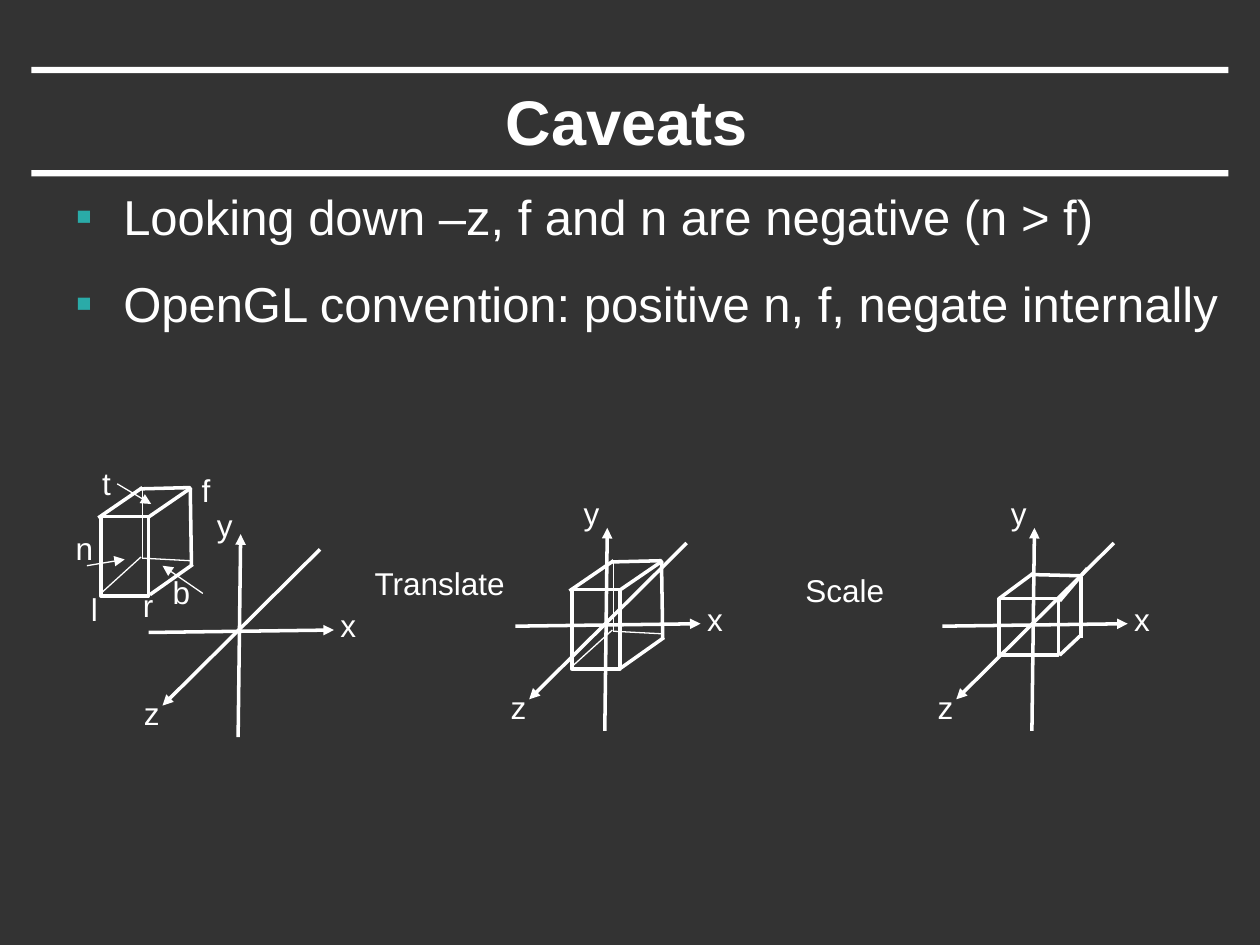
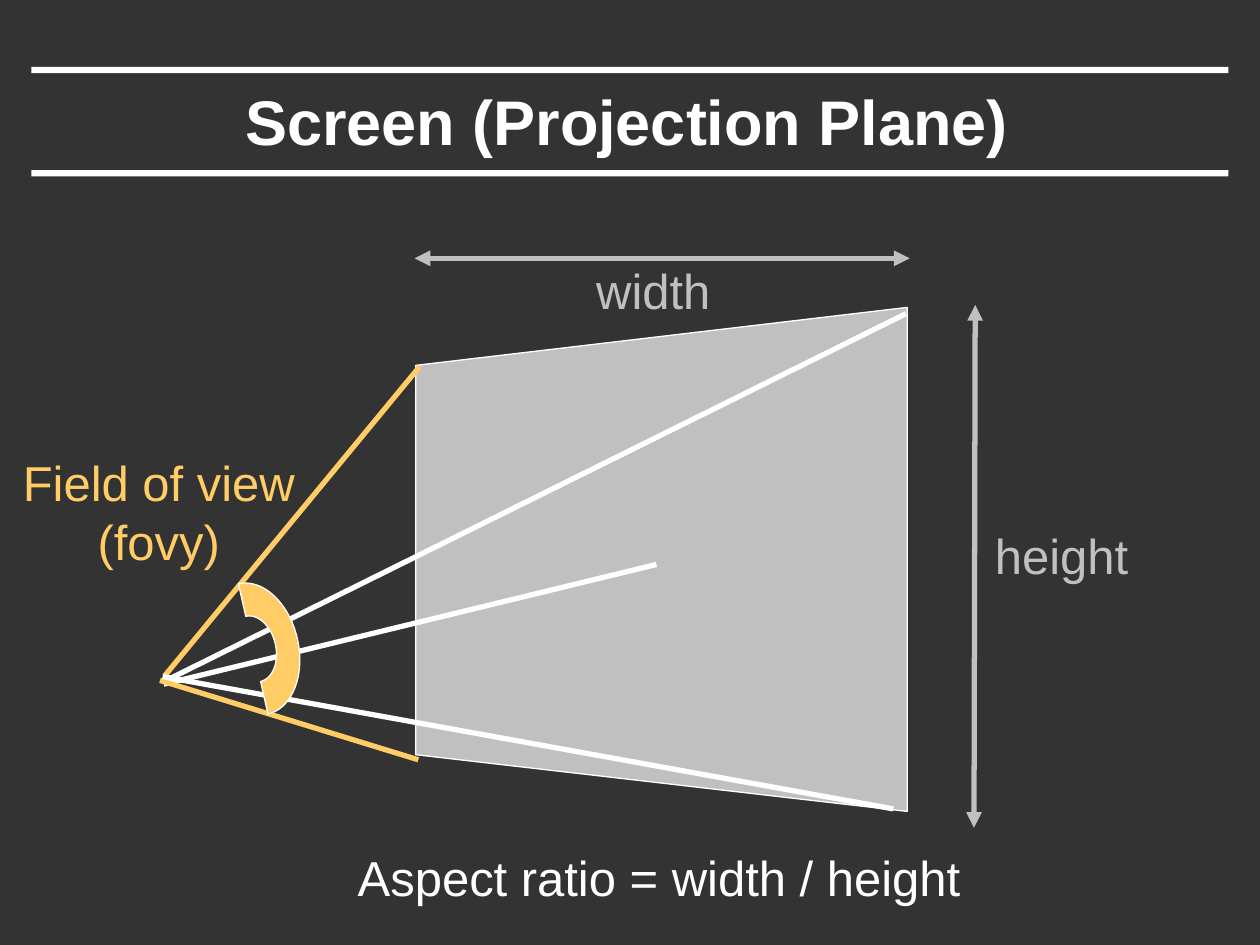
import math
from dataclasses import dataclass

import pptx
import pptx.dml.color
import pptx.enum.shapes
import pptx.enum.text
import pptx.oxml.ns
import pptx.util
from lxml import etree

UNIT = pptx.util.Cm(2.54)
FONT = "Arial"
HUES = {
    "back": "333333",
    "white": "FFFFFF",
    "teal": "2AABA8",
    "grey": "C0C0C0",
    "gold": "FFCC66",
}
THICK, THIN, BOLD = 2, 0.75, 3
TIP = ("tailEnd",)
BOTH = ("headEnd", "tailEnd")


@dataclass(frozen=True)
class Line:
    x1: float
    y1: float
    x2: float
    y2: float
    width: float = THICK
    hue: str = "white"
    tips: tuple[str, ...] = ()


@dataclass(frozen=True)
class Label:
    lines: tuple[str, ...]
    x: float
    y: float
    w: float = 0.33
    h: float = 0.4
    size: int = 18
    hue: str = "white"
    bold: bool = False
    middle: bool = False


@dataclass(frozen=True)
class Cube:
    x: float
    y: float
    w: float
    h: float
    edges: tuple[Line, ...]


AXES = (
    Line(-0.72, 0.01, 0.75, -0.01, tips=TIP),
    Line(-0.01, 0.84, 0.01, -0.77, tips=TIP),
    Line(0.64, -0.65, -0.61, 0.59, tips=TIP),
)
TALL = (
    Line(-0.02, 0.01, 0.33, -0.23),
    Line(0.71, -0.23, 0.31, -0.22),
    Line(0.37, 0.01, 0.72, -0.23),
    Line(0.39, 0.62, 0.73, 0.38),
    Line(0.71, -0.22, 0.72, 0.39),
    Line(0, 0.61, 0.32, 0.32, THIN),
    Line(0.33, 0.33, 0.71, 0.35, THIN),
    Line(0.33, -0.22, 0.33, 0.34, THIN),
)
SHORT = (
    Line(0, 0, 0.27, -0.2),
    Line(0.65, -0.18, 0.25, -0.19),
    Line(0.48, 0.02, 0.7, -0.24),
    Line(0.48, 0.45, 0.65, 0.29),
    Line(0.65, -0.17, 0.65, 0.31),
)
CUBES = (
    Cube(0.8, 4.1, 0.38, 0.63, TALL),
    Cube(4.54, 4.68, 0.38, 0.63, TALL),
    Cube(7.93, 4.75, 0.47, 0.45, SHORT),
)
SIDES = (
    Label(("l",), 0.62, 4.63, 0.26),
    Label(("r",), 1.03, 4.6, 0.29),
    Label(("t",), 0.71, 3.63, 0.27),
    Label(("b",), 1.27, 4.5, 0.34),
    Label(("n",), 0.5, 4.15, 0.34),
    Label(("f",), 1.49, 3.69, 0.29),
)
HINTS = (
    Line(1.61, 4.71, 1.29, 4.49, THIN, tips=TIP),
    Line(0.93, 3.84, 1.2, 4, THIN, tips=TIP),
    Line(0.69, 4.49, 0.99, 4.44, THIN, tips=TIP),
)
STEPS = (
    Label(("Translate",), 2.87, 4.43, 1.24),
    Label(("Scale",), 6.29, 4.48, 0.83),
)
NOTES = (
    "Looking down –z, f and n are negative (n > f)",
    "OpenGL convention: positive n, f, negate internally",
)
PLANE = [(7.2, 2.44), (3.3, 2.9), (3.3, 5.99), (7.2, 6.44)]
RAYS = (
    Line(1.3, 5.41, 7.19, 2.49, BOLD),
    Line(1.3, 5.43, 5.21, 4.48, BOLD),
    Line(1.31, 5.36, 3.33, 2.91, BOLD, "gold"),
    Line(1.27, 5.4, 3.32, 6.03, BOLD, "gold"),
    Line(1.29, 5.37, 7.09, 6.42, BOLD),
)
SPANS = (
    Line(3.29, 2.05, 7.22, 2.05, BOLD, "grey", BOTH),
    Line(7.73, 6.57, 7.74, 2.42, BOLD, "grey", BOTH),
)
TERMS = (
    Label(("Field of view", "(fovy)"), 0.07, 3.54, 2.38, 1.04, 28, "gold"),
    Label(("width",), 4.62, 2.02, 1.13, 0.57, 28, "grey"),
    Label(("height",), 7.79, 4.12, 1.27, 0.57, 28, "grey"),
    Label(("Aspect ratio = width / height",), 2.71, 6.68, 5.04, 0.57, 28),
)


def emu(*values: float) -> list[int]:
    return [round(value * UNIT) for value in values]


def color(hue: str) -> pptx.dml.color.RGBColor:
    return pptx.dml.color.RGBColor.from_string(HUES[hue])


def add_node(parent, tag: str, **attrs: str):
    return etree.SubElement(parent, pptx.oxml.ns.qn(tag), attrs)


def add_run(para, text: str, size: int, hue: str, bold: bool = False) -> None:
    run = para.add_run()
    run.text = text
    run.font.name = FONT
    run.font.size = pptx.util.Pt(size)
    run.font.bold = bold
    run.font.color.rgb = color(hue)


def style(shape, fill: str | None, line: str | None, width: float = THIN) -> None:
    shape.shadow.inherit = False
    if fill:
        shape.fill.solid()
        shape.fill.fore_color.rgb = color(fill)
    else:
        shape.fill.background()
    if line:
        shape.line.color.rgb = color(line)
        shape.line.width = pptx.util.Pt(width)
    else:
        shape.line.fill.background()


def add_rect(slide, x: float, y: float, w: float, h: float,
             fill: str | None, line: str | None) -> None:
    kind = pptx.enum.shapes.MSO_SHAPE.RECTANGLE
    style(slide.shapes.add_shape(kind, *emu(x, y, w, h)), fill, line, THICK)


def add_line(slide, line: Line, dx: float = 0, dy: float = 0) -> None:
    kind = pptx.enum.shapes.MSO_CONNECTOR.STRAIGHT
    ends = emu(line.x1 + dx, line.y1 + dy, line.x2 + dx, line.y2 + dy)
    link = slide.shapes.add_connector(kind, *ends)
    link.line.color.rgb = color(line.hue)
    link.line.width = pptx.util.Pt(line.width)
    for tip in line.tips:
        add_node(link.line._get_or_add_ln(), f"a:{tip}", type="triangle")
    add_node(link._element.spPr, "a:effectLst")


def add_label(slide, label: Label) -> None:
    box = slide.shapes.add_textbox(*emu(label.x, label.y, label.w, label.h))
    frame = box.text_frame
    frame.word_wrap = False
    if label.middle:
        frame.vertical_anchor = pptx.enum.text.MSO_ANCHOR.MIDDLE
    for index, text in enumerate(label.lines):
        para = frame.add_paragraph() if index else frame.paragraphs[0]
        para.alignment = pptx.enum.text.PP_ALIGN.CENTER
        add_run(para, text, label.size, label.hue, label.bold)


def add_shape(slide, points: list[tuple[float, float]], fill: str) -> None:
    first, *rest = [tuple(emu(*point)) for point in points]
    maker = slide.shapes.build_freeform(*first)
    maker.add_line_segments(rest, close=True)
    style(maker.convert_to_shape(), fill, "white")


def add_notes(slide) -> None:
    frame = slide.shapes.add_textbox(*emu(0.5, 1.43, 9.31, 6)).text_frame
    frame.word_wrap = True
    inset = emu(0.38)[0]
    for index, text in enumerate(NOTES):
        para = frame.add_paragraph() if index else frame.paragraphs[0]
        para.space_after = pptx.util.Pt(16)
        props = para._p.get_or_add_pPr()
        props.set("marL", str(inset))
        props.set("indent", str(-inset))
        tint = add_node(props, "a:buClr")
        add_node(tint, "a:srgbClr", val=HUES["teal"])
        add_node(props, "a:buFont", typeface=FONT)
        add_node(props, "a:buChar", char="▪")
        add_run(para, text, 28, "white")


def add_axes(slide, x: float, y: float, rise: float = 1.09) -> None:
    for line in AXES:
        add_line(slide, line, x, y)
    for name, dx, dy in (("x", 0.7, -0.25), ("z", -0.86, 0.45), ("y", -0.28, -rise)):
        add_label(slide, Label((name,), x + dx, y + dy))


def add_cube(slide, cube: Cube) -> None:
    add_rect(slide, cube.x, cube.y, cube.w, cube.h, None, "white")
    for edge in cube.edges:
        add_line(slide, edge, cube.x, cube.y)


def half_ring(x: float, y: float, long: float, short: float,
              turn: float, hole: float) -> list[tuple[float, float]]:
    cos, sin = math.cos(math.radians(turn)), math.sin(math.radians(turn))
    steps = [math.pi * step / 36 for step in range(37)]
    points = []
    for ratio, arc in ((1, steps), (hole, steps[::-1])):
        for angle in arc:
            u = ratio * long * math.cos(angle)
            v = -ratio * short * math.sin(angle)
            points.append((x + u * cos - v * sin, y + u * sin + v * cos))
    return points


def add_slide(deck, title: str):
    slide = deck.slides.add_slide(deck.slide_layouts[6])
    slide.background.fill.solid()
    slide.background.fill.fore_color.rgb = color("back")
    for y in (1.35, 0.53):
        add_rect(slide, 0.25, y, 9.5, 0.05, "white", None)
    add_label(slide, Label((title,), 0.74, 0.58, 8.47, 0.75, 36, bold=True, middle=True))
    return slide


def draw_caveats(deck) -> None:
    slide = add_slide(deck, "Caveats")
    add_notes(slide)
    add_axes(slide, 1.9, 5.01, 1.04)
    add_axes(slide, 4.81, 4.96)
    add_axes(slide, 8.2, 4.96)
    for cube in CUBES:
        add_cube(slide, cube)
    for hint in HINTS:
        add_line(slide, hint)
    for label in SIDES + STEPS:
        add_label(slide, label)


def draw_screen(deck) -> None:
    slide = add_slide(deck, "Screen (Projection Plane)")
    add_shape(slide, PLANE, "grey")
    for ray in RAYS:
        add_line(slide, ray)
    add_shape(slide, half_ring(2.01, 5.15, 0.53, 0.36, 77.2, 0.5), "gold")
    for span in SPANS:
        add_line(slide, span)
    for term in TERMS:
        add_label(slide, term)


def main() -> None:
    deck = pptx.Presentation()
    deck.slide_width, deck.slide_height = emu(10, 7.5)
    draw_caveats(deck)
    draw_screen(deck)
    deck.save("out.pptx")


if __name__ == "__main__":
    main()
